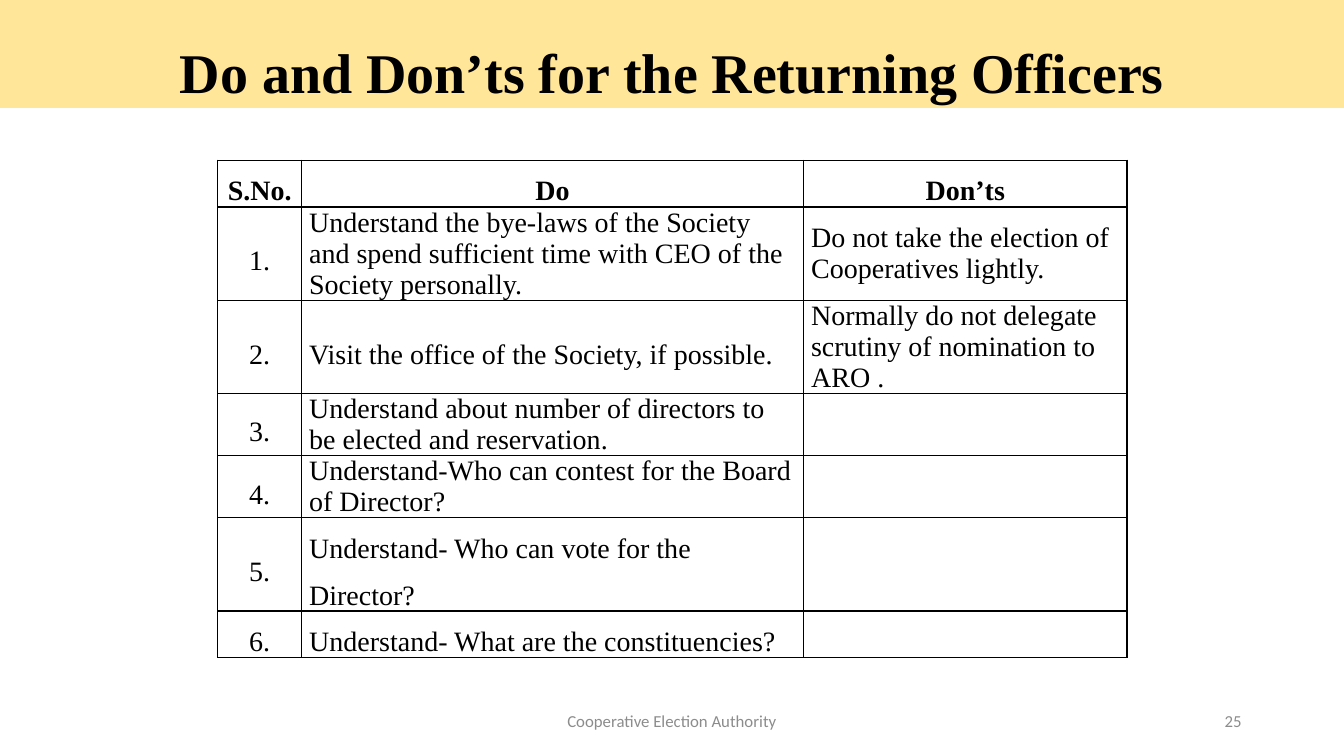
from dataclasses import dataclass

from lxml.etree import fromstring
from pptx import Presentation
from pptx.dml.color import RGBColor
from pptx.enum.text import MSO_ANCHOR, MSO_AUTO_SIZE, PP_ALIGN
from pptx.oxml.ns import nsdecls
from pptx.util import Cm, Pt


@dataclass(frozen=True)
class Theme:
    """Colours, fonts and type sizes of the slide."""
    ink: str = "000000"
    band: str = "FFE699"
    muted: str = "8C8C8C"
    serif: str = "Times New Roman"
    sans: str = "Calibri"
    title: int = 40
    body: int = 20
    small: int = 12


THEME = Theme()
TITLE = "Do and Don’ts for the Returning Officers"
HEADER = ("S.No.", "Do", "Don’ts")
ADVICE = [
    ("Understand the bye-laws of the Society and spend sufficient time with "
     "CEO of the Society personally.",
     "Do not take the election of Cooperatives lightly."),
    ("Visit the office of the Society, if possible.",
     "Normally do not delegate scrutiny of nomination to ARO ."),
    ("Understand about number of directors to be elected and reservation.", ""),
    ("Understand-Who can contest for the Board of Director?", ""),
    ("Understand- Who can vote for the Director?", ""),
    ("Understand- What are the constituencies?", ""),
]
SPACED_ROWS = (2, 5, 6)
COLUMN_WIDTHS = (2.11, 12.65, 8.15)
ROW_LINES = (1.5, 3, 3, 2, 2, 3, 1.5)
LINE_HEIGHT = 0.78


def apply(target, values):
    """Set every attribute in values on target."""
    for name, value in values.items():
        setattr(target, name, value)


def write(tf, text, font, size, color, bold=False, **paragraph):
    """Write one formatted paragraph into a text frame."""
    p = tf.paragraphs[0]
    apply(p, paragraph)
    r = p.add_run()
    r.text = text
    apply(r.font, {"name": font, "size": Pt(size), "bold": bold})
    r.font.color.rgb = RGBColor.from_string(color)


def add_title(s):
    """Turn the title placeholder into the coloured band."""
    sp = s.shapes.title
    apply(sp, {"left": 0, "top": 0, "width": Cm(33.87), "height": Cm(2.72)})
    sp.fill.solid()
    sp.fill.fore_color.rgb = RGBColor.from_string(THEME.band)
    apply(sp.text_frame, {"auto_size": MSO_AUTO_SIZE.NONE, "word_wrap": True,
                          "vertical_anchor": MSO_ANCHOR.MIDDLE})
    write(sp.text_frame, TITLE, THEME.serif, THEME.title, THEME.ink, True,
          alignment=PP_ALIGN.CENTER, line_spacing=1.5, space_before=Pt(10))


def add_footer(s, text, left, width, align):
    """Add a small grey text at the foot of the slide."""
    tf = s.shapes.add_textbox(Cm(left), Cm(17.65), Cm(width), Cm(1.02)).text_frame
    apply(tf, {"word_wrap": True, "vertical_anchor": MSO_ANCHOR.MIDDLE})
    write(tf, text, THEME.sans, THEME.small, THEME.muted, alignment=align)


def add_borders(cell):
    """Draw a thin line on all four sides of a cell."""
    tcPr = cell._tc.get_or_add_tcPr()
    for i, side in enumerate("LRTB"):
        tcPr.insert(i, fromstring(
            f'<a:ln{side} {nsdecls("a")} w="{Pt(1)}"><a:solidFill>'
            f'<a:srgbClr val="{THEME.ink}"/></a:solidFill></a:ln{side}>'))


def fill_cell(cell, text, bold, centred, spaced):
    """Format one table cell and write its text."""
    apply(cell, {"margin_left": Cm(0.19), "margin_right": Cm(0.19),
                 "margin_top": 0, "margin_bottom": 0,
                 "vertical_anchor": MSO_ANCHOR.MIDDLE})
    cell.fill.background()
    add_borders(cell)
    if text:
        write(cell.text_frame, text, THEME.serif, THEME.body, THEME.ink, bold,
              alignment=PP_ALIGN.CENTER if centred else PP_ALIGN.LEFT,
              line_spacing=1.5 if spaced else 1.0, space_after=Pt(8))


def add_advice_table(s):
    """Add the numbered table of advice."""
    rows = [HEADER] + [(f"{n}.", *pair) for n, pair in enumerate(ADVICE, 1)]
    table = s.shapes.add_table(
        len(rows), len(HEADER), Cm(5.49), Cm(4.04), Cm(sum(COLUMN_WIDTHS)),
        Cm(sum(ROW_LINES) * LINE_HEIGHT)).table
    apply(table, {"first_row": False, "horz_banding": False})
    for column, width in zip(table.columns, COLUMN_WIDTHS):
        column.width = Cm(width)
    for i, (row, lines) in enumerate(zip(table.rows, ROW_LINES)):
        row.height = Cm(lines * LINE_HEIGHT)
        for j, text in enumerate(rows[i]):
            centred = i == 0 or j == 0
            spaced = centred or (j == 1 and i in SPACED_ROWS)
            fill_cell(table.cell(i, j), text, i == 0, centred, spaced)


def main():
    """Build and save the slide."""
    prs = Presentation()
    apply(prs, {"slide_width": Cm(33.87), "slide_height": Cm(19.05)})
    s = prs.slides.add_slide(prs.slide_layouts[5])
    add_title(s)
    add_advice_table(s)
    add_footer(s, "Cooperative Election Authority", 11.22, 11.43, PP_ALIGN.CENTER)
    add_footer(s, "25", 23.92, 7.62, PP_ALIGN.RIGHT)
    prs.save("out.pptx")


if __name__ == "__main__":
    main()
